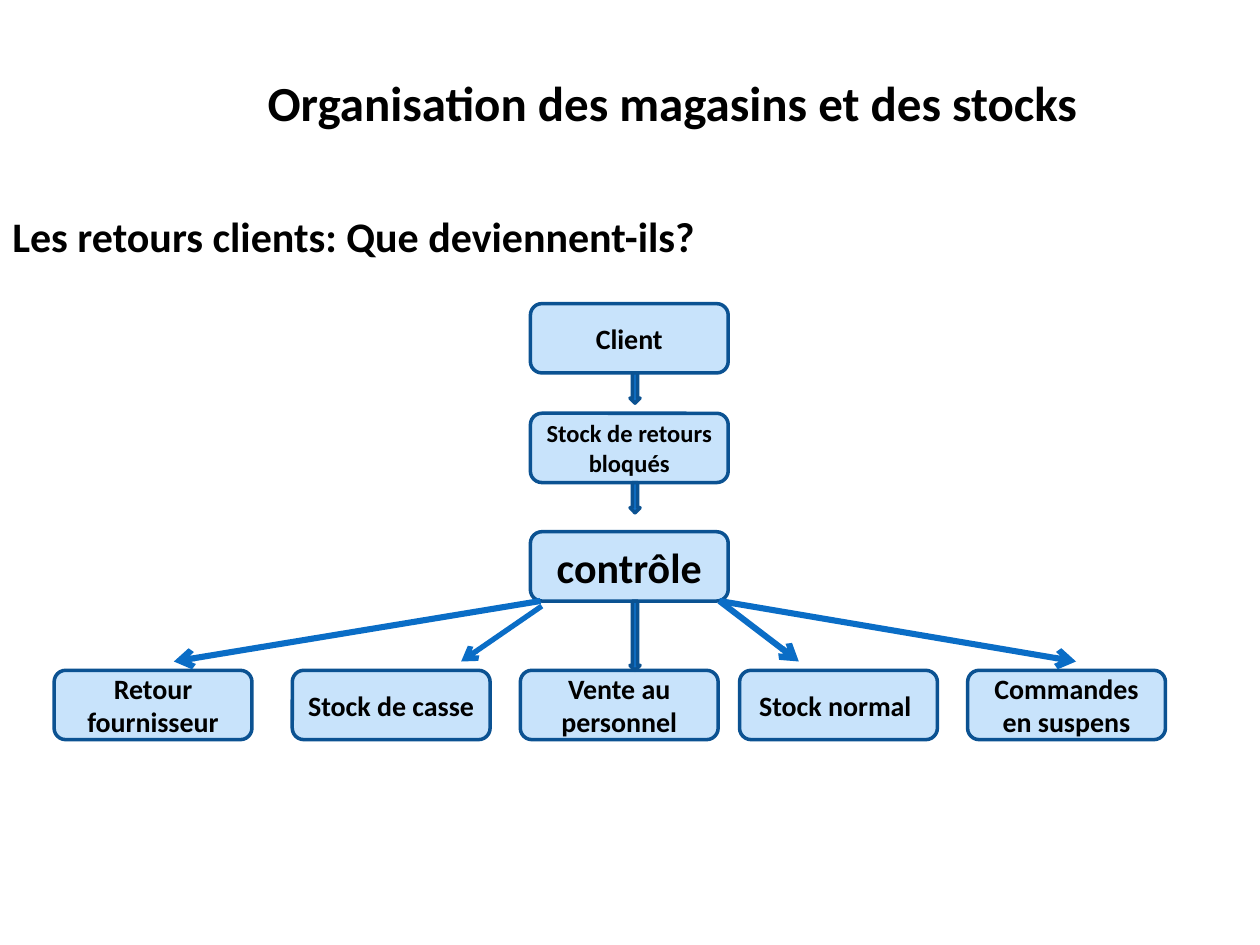
from typing import NamedTuple

from lxml import etree
from pptx import Presentation
from pptx.dml.color import RGBColor
from pptx.enum.shapes import MSO_CONNECTOR, MSO_SHAPE
from pptx.enum.text import MSO_ANCHOR, PP_ALIGN
from pptx.oxml.ns import qn
from pptx.util import Inches, Pt

ROUNDED = MSO_SHAPE.ROUNDED_RECTANGLE
DOWN_ARROW = MSO_SHAPE.DOWN_ARROW
STRAIGHT = MSO_CONNECTOR.STRAIGHT
CENTER, LEFT = PP_ALIGN.CENTER, PP_ALIGN.LEFT
MIDDLE = MSO_ANCHOR.MIDDLE

FONT = "Calibri"
COLORS = {
    "text": "000000",
    "box": "C8E3FB",
    "outline": "0B5292",
    "arrow": "0F6FC6",
    "branch": "0A6DC6",
}
BOX_W, BOX_H = 1.57, 0.55
STEP_LEFT = 4.21
OUTCOME_TOP = 5.32
ARROW_LEFT, ARROW_W = 5, 0.08


class Box(NamedTuple):
    label: str
    left: float
    top: float
    size: int = 16


class Branch(NamedTuple):
    start: tuple[float, float]
    end: tuple[float, float]
    width: float = 3.5


STEPS = [
    Box("Client", STEP_LEFT, 2.41),
    Box("Stock de retours bloqués", STEP_LEFT, 3.28, 14),
    Box("contrôle", STEP_LEFT, 4.22, 24),
]
OUTCOMES = [
    Box("Retour fournisseur", 0.43, OUTCOME_TOP),
    Box("Stock de casse", 2.32, OUTCOME_TOP),
    Box("Vente au personnel", 4.13, OUTCOME_TOP),
    Box("Stock normal ", 5.87, OUTCOME_TOP),
    Box("Commandes en suspens", 7.68, OUTCOME_TOP),
]
ARROW_LENGTHS = [0.24, 0.24, 0.55]
BRANCHES = [
    Branch((4.3, 4.81), (3.66, 5.25), 3),
    Branch((5.71, 4.77), (6.34, 5.25)),
    Branch((5.71, 4.77), (8.54, 5.25)),
    Branch((4.29, 4.77), (1.38, 5.25)),
]


def rgb(name: str) -> RGBColor:
    return RGBColor.from_string(COLORS[name])


def write(frame, text: str, size: int, align=CENTER) -> None:
    frame.text = text
    frame.word_wrap = True
    paragraph = frame.paragraphs[0]
    paragraph.alignment = align
    font = paragraph.runs[0].font
    font.name, font.size, font.bold = FONT, Pt(size), True
    font.color.rgb = rgb("text")


def add_outlined(slide, preset, left: float, top: float, width: float,
                 height: float, fill: str):
    shape = slide.shapes.add_shape(
        preset, Inches(left), Inches(top), Inches(width), Inches(height))
    shape.shadow.inherit = False
    shape.fill.solid()
    shape.fill.fore_color.rgb = rgb(fill)
    shape.line.color.rgb = rgb("outline")
    shape.line.width = Pt(2)
    return shape


def add_box(slide, box: Box) -> None:
    shape = add_outlined(slide, ROUNDED, box.left, box.top, BOX_W, BOX_H, "box")
    shape.text_frame.vertical_anchor = MIDDLE
    write(shape.text_frame, box.label, box.size)


def add_branch(slide, branch: Branch) -> None:
    points = [Inches(value) for value in branch.start + branch.end]
    connector = slide.shapes.add_connector(STRAIGHT, *points)
    connector.line.color.rgb = rgb("branch")
    connector.line.width = Pt(branch.width)
    etree.SubElement(connector.line._get_or_add_ln(), qn("a:tailEnd"), type="arrow")
    etree.SubElement(connector._element.spPr, qn("a:effectLst"))


def main() -> None:
    prs = Presentation()
    prs.slide_width, prs.slide_height = Inches(10), Inches(7.5)
    slide = prs.slides.add_slide(prs.slide_layouts[5])

    # Title and question
    title = slide.shapes.title
    title.left, title.top = Inches(1.17), Inches(0.25)
    title.width, title.height = Inches(8.33), Inches(1.12)
    title.text_frame.vertical_anchor = MIDDLE
    write(title.text_frame, "Organisation des magasins et des stocks", 28)
    question = slide.shapes.add_textbox(
        Inches(0), Inches(1.62), Inches(8.46), Inches(0.5))
    write(question.text_frame, "Les retours clients: Que deviennent-ils?", 24, LEFT)

    # Steps and outcomes
    for box in STEPS + OUTCOMES:
        add_box(slide, box)

    # Arrows down from each step
    for step, length in zip(STEPS, ARROW_LENGTHS):
        add_outlined(slide, DOWN_ARROW, ARROW_LEFT, step.top + BOX_H,
                     ARROW_W, length, "arrow")

    # Branches from the check to the outcomes
    for branch in BRANCHES:
        add_branch(slide, branch)

    prs.save("out.pptx")


if __name__ == "__main__":
    main()
